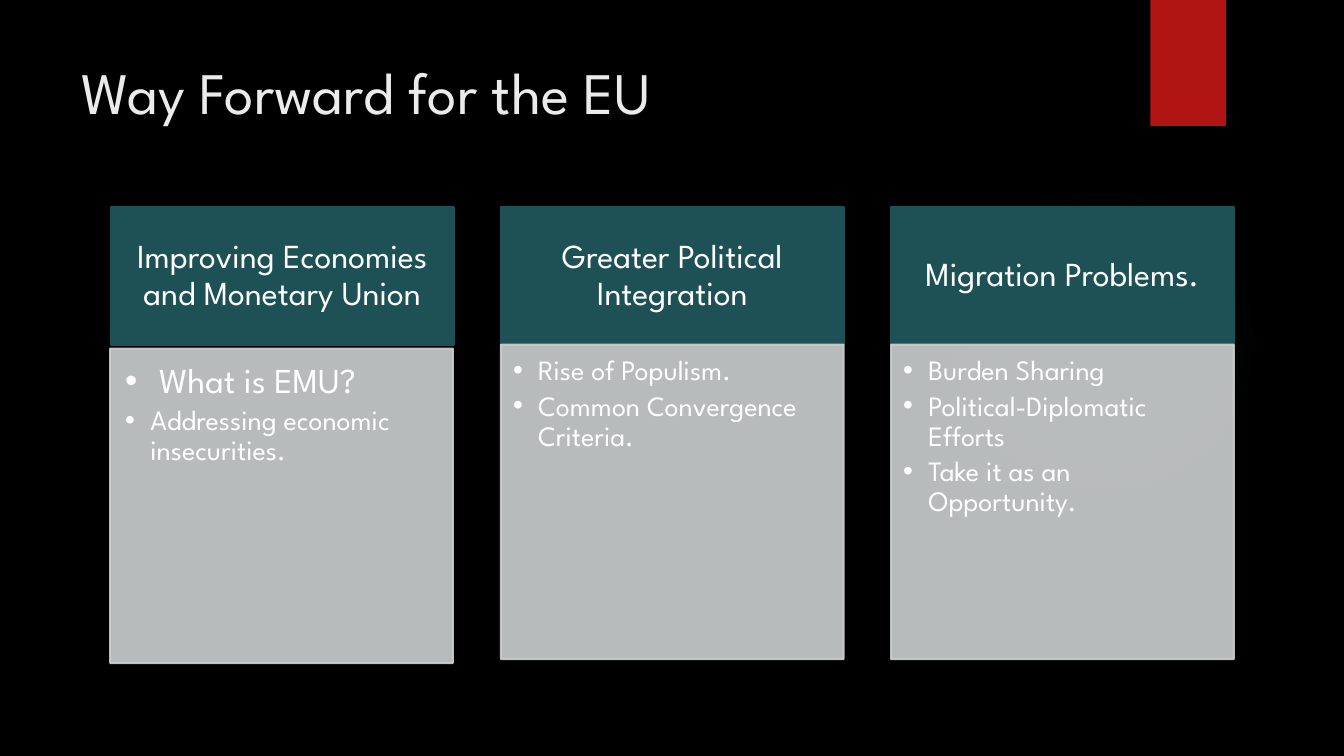
import pptx
import pptx.dml.color
import pptx.enum.shapes
import pptx.enum.text
import pptx.oxml
import pptx.oxml.ns
import pptx.util

Pt = pptx.util.Pt
SHAPES = pptx.enum.shapes.MSO_SHAPE
ANCHOR = pptx.enum.text.MSO_ANCHOR
ALIGN = pptx.enum.text.PP_ALIGN
FONT = "League Spartan"
TEAL, SILVER, WHITE = "1E5155", "CDD0D1", "FFFFFF"
COLUMN_WIDTH, COLUMN_STEP = 244.8, 278.64
HEADER_HEIGHT, LIST_HEIGHT = 97.92, 224.64

COLUMNS = [
    ("Improving Economies and Monetary Union",
     [(" What is EMU?", 25), ("Addressing economic insecurities.", 20)]),
    ("Greater Political Integration",
     [("Rise of Populism.", 20), ("Common Convergence Criteria.", 20)]),
    ("Migration Problems.",
     [("Burden Sharing", 20), ("Political-Diplomatic Efforts", 20),
      ("Take it as an Opportunity.", 20)]),
]
HEADER_FRAME = dict(vertical_anchor=ANCHOR.MIDDLE, margin_left=Pt(13.44), margin_top=Pt(7.68),
                    margin_right=Pt(13.44), margin_bottom=Pt(7.68))
LIST_FRAME = dict(vertical_anchor=ANCHOR.TOP, margin_left=Pt(8.64), margin_top=Pt(8.64),
                  margin_right=Pt(11.52), margin_bottom=Pt(12.24))
# The first list has larger text, so its frame is wider too.
FIRST_LIST_FRAME = dict(LIST_FRAME, margin_left=Pt(10.8), margin_top=Pt(10.8),
                        margin_right=Pt(13.44), margin_bottom=Pt(15.84))


def rgb(color):
    return pptx.dml.color.RGBColor.from_string(color)


def apply(target, values):
    for name, value in values.items():
        setattr(target, name, value)


def add_block(slide, kind, box, color, line_width=0, opacity=100):
    block = slide.shapes.add_shape(kind, *map(Pt, box))
    block.shadow.inherit = False
    block.fill.solid()
    block.fill.fore_color.rgb = rgb(color)
    if line_width:
        block.line.color.rgb = rgb(color)
        block.line.width = Pt(line_width)
    else:
        block.line.fill.background()
    if opacity < 100:
        for color_element in block._element.spPr.iter(pptx.oxml.ns.qn("a:srgbClr")):
            alpha = color_element.makeelement(pptx.oxml.ns.qn("a:alpha"),
                                              {"val": str(opacity * 1000)})
            color_element.append(alpha)
    return block


def write(paragraph, text, size, color, **layout):
    apply(paragraph, layout)
    paragraph.text = text
    apply(paragraph.font, dict(name=FONT, size=Pt(size)))
    paragraph.font.color.rgb = rgb(color)


def add_bullet(paragraph):
    properties = paragraph._p.get_or_add_pPr()
    properties.set("marL", str(Pt(18)))
    properties.set("indent", str(-Pt(18)))
    for tag, attribute, value in (("a:buFont", "typeface", "Arial"), ("a:buChar", "char", "•")):
        properties.append(properties.makeelement(pptx.oxml.ns.qn(tag), {attribute: value}))


def add_glow(slide, box):
    """Faint teal light that fades out towards the rim of the box."""
    glow = add_block(slide, SHAPES.OVAL, box, TEAL)
    stops = "".join(
        f'<a:gs pos="{position * 1000}"><a:srgbClr val="50B9C1">'
        f'<a:alpha val="{opacity * 1000}"/></a:srgbClr></a:gs>'
        for position, opacity in ((0, 7), (36, 6), (69, 0)))
    gradient = pptx.oxml.parse_xml(
        f'<a:gradFill {pptx.oxml.ns.nsdecls("a")}><a:gsLst>{stops}</a:gsLst><a:path path="circle">'
        '<a:fillToRect l="50000" t="50000" r="50000" b="50000"/></a:path></a:gradFill>')
    properties = glow._element.spPr
    properties.replace(properties.find(pptx.oxml.ns.qn("a:solidFill")), gradient)


def add_title(slide, text, box):
    title = slide.shapes.title
    apply(title, dict(zip(("left", "top", "width", "height"), map(Pt, box))))
    apply(title.text_frame, dict(vertical_anchor=ANCHOR.TOP, word_wrap=True))
    write(title.text_frame.paragraphs[0], text, 42, "EBEBEB", alignment=ALIGN.LEFT)


def add_header(slide, text, box):
    header = add_block(slide, SHAPES.RECTANGLE, box, TEAL, line_width=1.5)
    apply(header.text_frame, dict(HEADER_FRAME, word_wrap=True))
    write(header.text_frame.paragraphs[0], text, 24, WHITE,
          alignment=ALIGN.CENTER, line_spacing=0.9)


def add_list(slide, points, box, margins):
    panel = add_block(slide, SHAPES.RECTANGLE, box, SILVER, line_width=1.5, opacity=90)
    frame = panel.text_frame
    apply(frame, dict(margins, word_wrap=True))
    for index, (text, size) in enumerate(points):
        paragraph = frame.add_paragraph() if index else frame.paragraphs[0]
        apply(paragraph, dict(alignment=ALIGN.LEFT, line_spacing=0.9, space_after=Pt(3.5)))
        add_bullet(paragraph)
        write(paragraph, text, size, WHITE)


def add_columns(slide, left, top):
    for index, (heading, points) in enumerate(COLUMNS):
        x = left + index * COLUMN_STEP
        add_header(slide, heading, (x, top, COLUMN_WIDTH, HEADER_HEIGHT))
        is_first = index == 0
        shift_x, shift_y = (-0.5, 2.88) if is_first else (0, 0)
        add_list(slide, points,
                 (x + shift_x, top + HEADER_HEIGHT + shift_y, COLUMN_WIDTH, LIST_HEIGHT),
                 FIRST_LIST_FRAME if is_first else LIST_FRAME)


def main():
    deck = pptx.Presentation()
    apply(deck, dict(slide_width=Pt(960), slide_height=Pt(540)))
    slide = deck.slides.add_slide(deck.slide_layouts.get_by_name("Title Only"))
    slide.background.fill.solid()
    slide.background.fill.fore_color.rgb = rgb("000000")
    add_glow(slide, (677.5, 131.76, 221.76, 221.76))
    add_block(slide, SHAPES.RECTANGLE, (821.75, 0, 54, 90), "B01513")
    add_title(slide, "Way Forward for the EU", (51.12, 36, 740.88, 110.16))
    add_columns(slide, 79.2, 148.2)
    deck.save("out.pptx")


if __name__ == "__main__":
    main()
